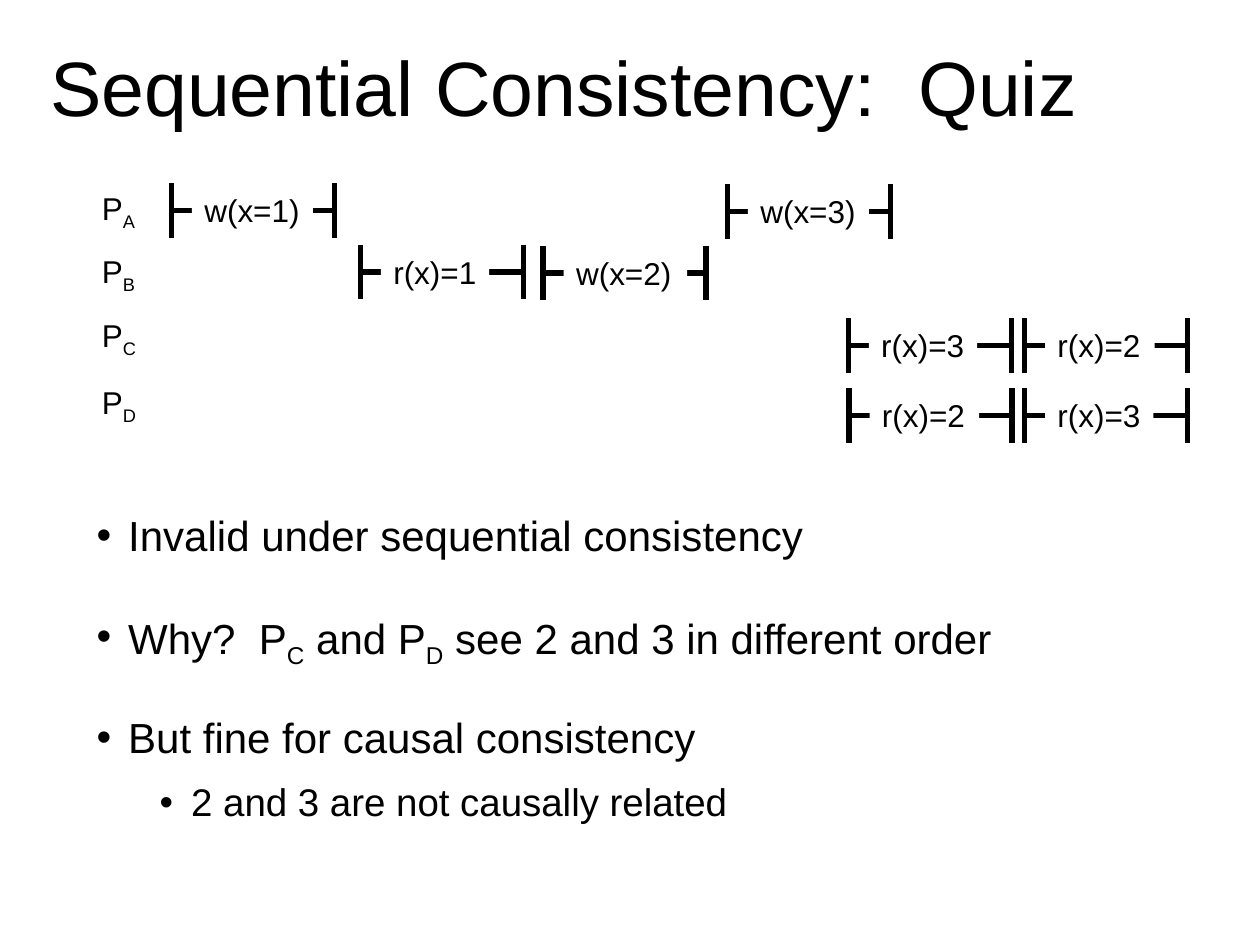
"""Builds the sequential consistency quiz slide with its read and write timeline."""
import pptx
import pptx.dml.color
import pptx.enum.shapes
import pptx.enum.text
import pptx.oxml
import pptx.oxml.ns
import pptx.util
from lxml import etree

Pt = pptx.util.Pt
ANCHOR = pptx.enum.text.MSO_ANCHOR
LEFT = pptx.enum.text.PP_ALIGN.LEFT
THEME = {
    "font": "Arial",
    "ink": pptx.dml.color.RGBColor(0, 0, 0),
    "paper": pptx.dml.color.RGBColor(255, 255, 255),
    "title": Pt(44), "bullet": Pt(24), "sub_bullet": Pt(22), "label": Pt(18),
    "line": Pt(3),
}


def write(p, text, size):
    """Write text into a paragraph, with the parts between tildes as subscripts."""
    p.alignment = LEFT
    for i, part in enumerate(text.split("~")):
        if part:
            r = p.add_run()
            r.text = part
            for name, value in {"name": THEME["font"], "size": THEME[size]}.items():
                setattr(r.font, name, value)
            r.font.color.rgb = THEME["ink"]
            if i % 2:
                r._r.get_or_add_rPr().set("baseline", "-25000")


def add_line(shapes, x1, y1, x2, y2):
    """Add a plain thick line."""
    line = shapes.add_connector(pptx.enum.shapes.MSO_CONNECTOR.STRAIGHT,
                                Pt(x1), Pt(y1), Pt(x2), Pt(y2))
    line.line.color.rgb = THEME["ink"]
    line.line.width = THEME["line"]
    etree.SubElement(line._element.spPr, pptx.oxml.ns.qn("a:effectLst"))


prs = pptx.Presentation()
prs.slide_width, prs.slide_height = Pt(720), Pt(540)
s = prs.slides.add_slide(prs.slide_layouts[6])

tf = s.shapes.add_textbox(Pt(21.6), Pt(0), Pt(676.8), Pt(104.4)).text_frame
tf.word_wrap = True
tf.vertical_anchor = ANCHOR.MIDDLE
tf.paragraphs[0].line_spacing = 0.9
write(tf.paragraphs[0], "Sequential Consistency:  Quiz", "title")

bullets = [
    ("Invalid under sequential consistency", 0),
    ("Why?  P~C~ and P~D~ see 2 and 3 in different order", 0),
    ("But fine for causal consistency", 0),
    ("2 and 3 are not causally related", 1),
]
tf = s.shapes.add_textbox(Pt(48.2), Pt(290.9), Pt(589), Pt(238.3)).text_frame
tf.word_wrap = True
for i, (text, level) in enumerate(bullets):
    p = tf.add_paragraph() if i else tf.paragraphs[0]
    form = {"level": level, "line_spacing": 0.9,
            "space_before": Pt(6 if level else 24), "space_after": Pt(6)}
    for name, value in form.items():
        setattr(p, name, value)
    write(p, text, "sub_bullet" if level else "bullet")
    pPr = p._p.get_or_add_pPr()
    pPr.set("marL", str(Pt(18 + 36 * level)))
    pPr.set("indent", str(-Pt(18)))
    etree.SubElement(pPr, pptx.oxml.ns.qn("a:buFont"), typeface=THEME["font"])
    etree.SubElement(pPr, pptx.oxml.ns.qn("a:buChar"), char="•")

for name, top in {"A": 104.4, "B": 140.4, "C": 177.1, "D": 215.3}.items():
    tf = s.shapes.add_textbox(Pt(51.1), Pt(top), Pt(35), Pt(28.8)).text_frame
    tf.word_wrap = False
    write(tf.paragraphs[0], f"P~{name}~", "label")

operations = [
    ("w(x=1)", 97.9, 120.2, 69.1),
    ("w(x=2)", 310.3, 156, 70.6),
    ("w(x=3)", 415.6, 121, 69.1),
    ("r(x)=1", 205.9, 155.5, 61.9),
    ("r(x)=3", 484.7, 197.4, 61.9),
    ("r(x)=2", 585.4, 197.4, 62.6),
    ("r(x)=2", 485.1, 237.6, 62.6),
    ("r(x)=3", 585.4, 237.6, 61.9),
]
span, half_bar = 93.2, 15.6
for text, x, y, width in operations:
    group = s.shapes.add_group_shape()
    add_line(group.shapes, x, y, x + span, y)
    for end in (x, x + span):
        add_line(group.shapes, end, y - half_bar, end, y + half_bar)
    sp = group.shapes.add_shape(pptx.enum.shapes.MSO_SHAPE.RECTANGLE,
                                Pt(x + 11.8), Pt(y - 14.6), Pt(width), Pt(28.8))
    sp.shadow.inherit = False
    sp.fill.solid()
    sp.fill.fore_color.rgb = THEME["paper"]
    sp.line.fill.background()
    tf = sp.text_frame
    tf.word_wrap = False
    tf.vertical_anchor = ANCHOR.TOP
    write(tf.paragraphs[0], text, "label")

prs.save("out.pptx")
